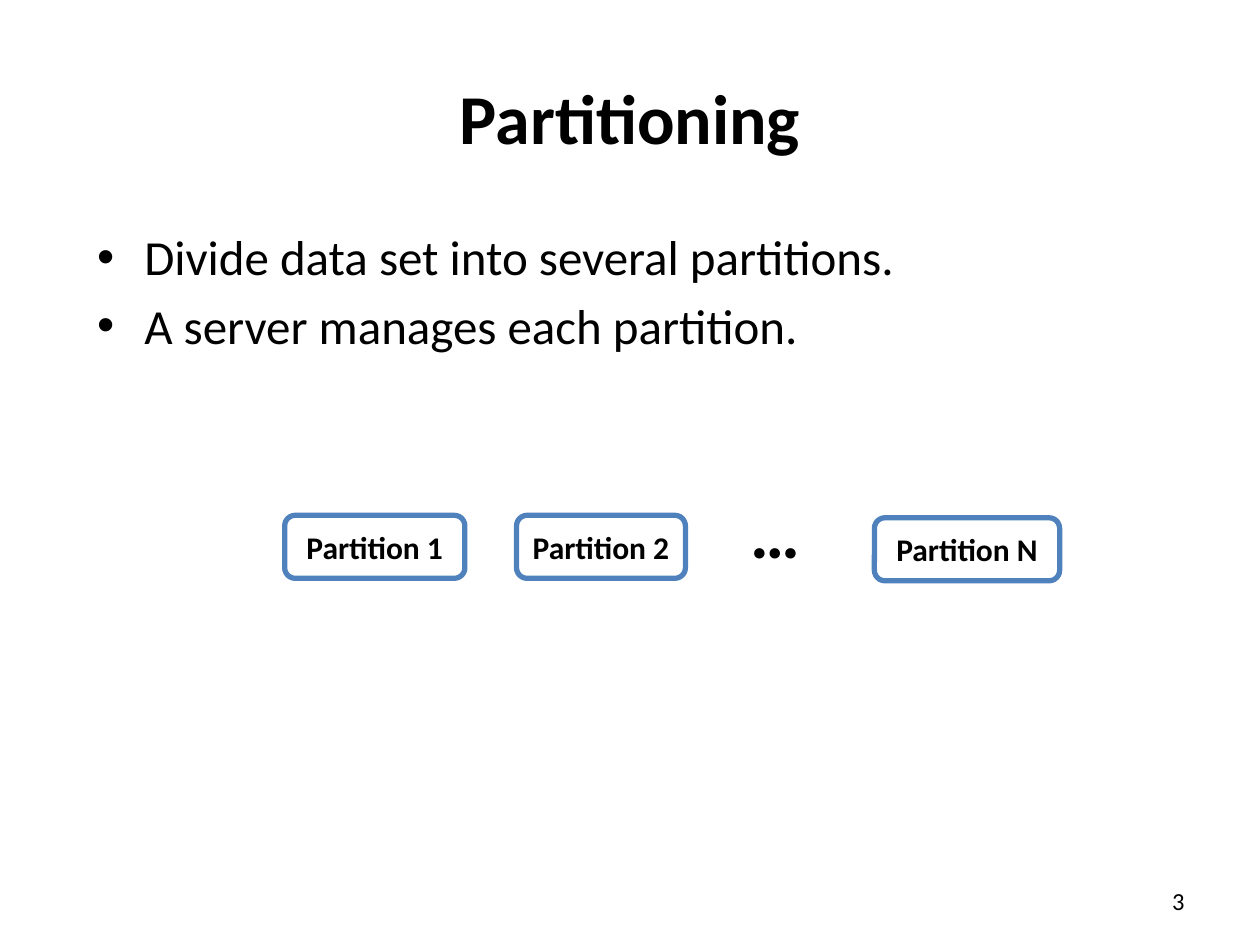
from pptx import Presentation
from pptx.dml.color import RGBColor
from pptx.enum.shapes import MSO_SHAPE
from pptx.enum.text import MSO_ANCHOR, PP_ALIGN
from pptx.util import Inches, Pt

COLORS = {"text": "000000", "fill": "FFFFFF", "outline": "4F81BD"}
FONT = "Calibri"


def color(name):
    """Return the named palette colour."""
    return RGBColor.from_string(COLORS[name])


def place(shape, box):
    """Move a shape to a box of left, top, width and height in inches."""
    shape.left, shape.top, shape.width, shape.height = map(Inches, box)


def write(para, text, size=18, bold=False, align=PP_ALIGN.LEFT, before=0):
    """Put formatted text in a paragraph."""
    para.alignment = align
    para.space_before = Pt(before)
    span = para.add_run()
    span.text = text
    span.font.name = FONT
    span.font.size = Pt(size)
    span.font.bold = bold
    span.font.color.rgb = color("text")


def add_title(page, box, text):
    """Fill the title placeholder."""
    title = page.shapes.title
    place(title, box)
    title.text_frame.vertical_anchor = MSO_ANCHOR.MIDDLE
    write(title.text_frame.paragraphs[0], text, size=40, bold=True, align=PP_ALIGN.CENTER)


def add_points(page, box, points):
    """Fill the body placeholder with a bulleted list."""
    body = page.placeholders[1]
    place(body, box)
    frame = body.text_frame
    for index, point in enumerate(points):
        para = frame.add_paragraph() if index else frame.paragraphs[0]
        write(para, point, size=28, before=5.6 if index else 0)


def add_label(page, box, text, wrap=True, anchor=MSO_ANCHOR.TOP, **style):
    """Add a text box holding one line."""
    label = page.shapes.add_textbox(*map(Inches, box))
    label.text_frame.word_wrap = wrap
    label.text_frame.vertical_anchor = anchor
    write(label.text_frame.paragraphs[0], text, **style)


def add_partition(page, box, name):
    """Add one outlined, rounded partition."""
    partition = page.shapes.add_shape(MSO_SHAPE.ROUNDED_RECTANGLE, *map(Inches, box))
    partition.shadow.inherit = False
    partition.fill.solid()
    partition.fill.fore_color.rgb = color("fill")
    partition.line.color.rgb = color("outline")
    partition.line.width = Pt(3)
    partition.text_frame.vertical_anchor = MSO_ANCHOR.MIDDLE
    write(partition.text_frame.paragraphs[0], name, bold=True, align=PP_ALIGN.CENTER)


def add_partition_row(page, box):
    """Lay out the partitions and the ellipsis from the row's box."""
    left, top, width, height = box
    last_width = 1.47
    add_partition(page, (left, top, 1.43, height), "Partition 1")
    add_partition(page, (left + 1.84, top, 1.34, height), "Partition 2")
    add_partition(page, (left + width - last_width, top + 0.02, last_width, height), "Partition N")
    add_label(page, (left + 3.6, top - 0.26, 0.6, 0.77), "…", wrap=False, size=40, bold=True)


def main():
    """Build and save the deck."""
    deck = Presentation()
    deck.slide_width, deck.slide_height = Inches(10), Inches(7.5)
    page = deck.slides.add_slide(deck.slide_layouts[1])
    add_title(page, (0.5, 0.3, 9, 1.25), "Partitioning")
    add_points(page, (0.67, 1.75, 9, 4.95), [
        "Divide data set into several partitions.",
        "A server manages each partition.",
    ])
    add_label(page, (7.17, 6.95, 2.33, 0.4), "3", anchor=MSO_ANCHOR.MIDDLE,
              size=14, align=PP_ALIGN.RIGHT)
    add_partition_row(page, (2.26, 4.09, 6.15, 0.5))
    deck.save("out.pptx")


if __name__ == "__main__":
    main()
